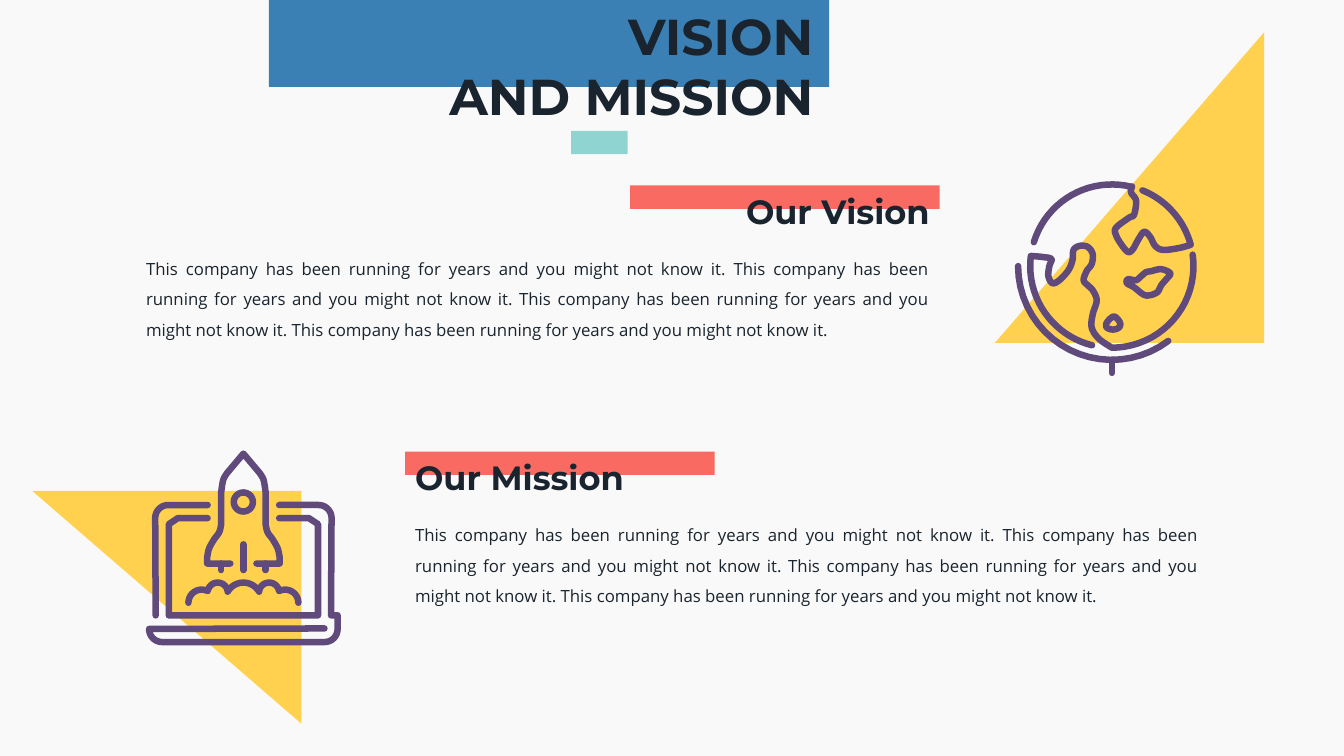
from dataclasses import dataclass
from math import cos, radians, sin

from lxml.etree import SubElement
from pptx import Presentation
from pptx.dml.color import RGBColor
from pptx.enum.shapes import MSO_SHAPE as Preset
from pptx.enum.text import MSO_ANCHOR as Anchor, MSO_AUTO_SIZE as AutoSize, PP_ALIGN as Align
from pptx.oxml.ns import qn
from pptx.util import Inches, Pt

Point = tuple[float, float]
Outline = list[Point]

INK, PURPLE, BLUE, TEAL = "1A242E", "604A7B", "3B80B5", "90D4D2"
RED, YELLOW, PAPER = "F96A62", "FFD14F", "F9F9F9"

deck = Presentation()
deck.slide_width, deck.slide_height = Inches(13.333), Inches(7.5)
COLUMN, ROW = deck.slide_width / 100, deck.slide_height / 100
ICON_CELL = deck.slide_height / 750
slide = deck.slides.add_slide(deck.slide_layouts[5])


@dataclass
class Box:
    """Place and size in hundredths of the slide's width and height."""
    left: float
    top: float
    width: float
    height: float

    def emu(self) -> tuple[int, int, int, int]:
        return (round(self.left * COLUMN), round(self.top * ROW),
                round(self.width * COLUMN), round(self.height * ROW))


@dataclass
class Block:
    box: Box
    color: str
    preset: Preset = Preset.RECTANGLE
    turn: int = 0


@dataclass
class Section:
    heading: str
    left: float
    top: float
    align: Align


@dataclass
class Stroke:
    points: Outline
    closed: bool = False


@dataclass
class Icon:
    column: float
    row: float
    strokes: list[Stroke]


def paint(color_format, color: str) -> None:
    color_format.rgb = RGBColor.from_string(color)


def draw_block(block: Block) -> None:
    left, top, width, height = block.box.emu()
    if block.turn % 180:  # a quarter turn swaps the sides around the same centre
        left, top = left + (width - height) // 2, top + (height - width) // 2
        width, height = height, width
    panel = slide.shapes.add_shape(block.preset, left, top, width, height)
    panel.rotation = block.turn
    panel.shadow.inherit = False
    panel.fill.solid()
    paint(panel.fill.fore_color, block.color)
    panel.line.fill.background()


def write(holder, text: str, *, size: float, font: str, bold: bool = False,
          align: Align = Align.LEFT, anchor: Anchor = Anchor.TOP,
          spacing: float = 1.0, before: float = 0) -> None:
    frame = holder.text_frame
    frame.word_wrap, frame.auto_size, frame.vertical_anchor = True, AutoSize.NONE, anchor
    paragraph = frame.paragraphs[0]
    paragraph.text = text
    paragraph.alignment, paragraph.line_spacing = align, spacing
    paragraph.space_before = Pt(before)
    for run in paragraph.runs:
        run.font.size, run.font.name, run.font.bold = Pt(size), font, bold
        paint(run.font.color, INK)


def arc(x: float, y: float, radius: float, start: float, end: float, steps: int = 20) -> Outline:
    """Points on a circle; angles run clockwise from the right."""
    angles = [radians(start + (end - start) * i / steps) for i in range(steps + 1)]
    return [(x + radius * cos(a), y + radius * sin(a)) for a in angles]


def smooth(points: Outline, closed: bool = False, steps: int = 5) -> Outline:
    """Catmull-Rom curve through the points."""
    ring = [points[-1], *points, *points[:2]] if closed else [points[0], *points, points[-1]]
    curve: Outline = []
    for a, b, c, d in zip(ring, ring[1:], ring[2:], ring[3:]):
        for t in (i / steps for i in range(steps)):
            x, y = (b[k] + t * (c[k] - a[k]) / 2
                    + t * t * (2 * a[k] - 5 * b[k] + 4 * c[k] - d[k]) / 2
                    + t ** 3 * (3 * b[k] - a[k] - 3 * c[k] + d[k]) / 2 for k in (0, 1))
            curve.append((x, y))
    return curve if closed else [*curve, points[-1]]


def mirror(points: Outline) -> Outline:
    return [(-x, y) for x, y in reversed(points)]


def draw_icon(icon: Icon) -> None:
    group = slide.shapes.add_group_shape()
    for stroke in icon.strokes:
        start, *rest = [(round(icon.column * COLUMN + x * ICON_CELL),
                         round(icon.row * ROW + y * ICON_CELL)) for x, y in stroke.points]
        builder = group.shapes.build_freeform(*start)
        builder.add_line_segments(rest, close=stroke.closed)
        contour = builder.convert_to_shape()
        contour.shadow.inherit = False
        contour.fill.background()
        contour.line.width = Pt(4.65)
        paint(contour.line.color, PURPLE)
        outline = contour.element.spPr.find(qn("a:ln"))
        outline.set("cap", "rnd")
        SubElement(outline, qn("a:round"))


# Globe, measured from its centre
north = smooth([(20, -79), (19, -73), (24, -65), (22, -51), (17, -48), (4, -38), (4, -31),
                (9, -22), (16, -14), (21, -17), (26, -26), (32, -34), (38, -29), (43, -20),
                (51, -16), (67, -18), (78, -21)])
south = smooth([(0, 81), (-13, 72), (-20, 61), (-19, 48), (-15, 34), (-19, 24), (-24, 19),
                (-28, 14), (-25, 5), (-20, -2), (-19, -12), (-24, -19), (-32, -20), (-38, -16),
                (-39, -6), (-43, 4), (-52, 14), (-59, 17), (-63, 10), (-62, 0), (-60, -7),
                (-69, -9), (-80, -10)])
island = smooth([(39, 5), (34, 6), (29, 10), (24, 14), (16, 13), (15, 17), (22, 21), (31, 28),
                 (37, 29), (45, 26), (49, 19), (54, 13), (58, 8), (55, 5), (48, 3)], closed=True)
lake = smooth([(2, 50), (-5, 56), (-5, 61), (1, 63), (7, 61), (8, 56)], closed=True)
globe = Icon(82.73, 35.2, [
    Stroke(arc(0, 0, 81, 197, 284) + north + arc(0, 0, 81, 345, 292)),
    Stroke(arc(0, 0, 81, -8, 90) + south + arc(0, 0, 81, 187, 104)),
    Stroke(island, closed=True),
    Stroke(lake, closed=True),
    Stroke(arc(0, 0, 93, 180, 53)),
    Stroke([(0, 93), (0, 106)]),
])

# Rocket over a laptop, measured from the rocket's axis
hull = [(-13, 59), (-36, 59)] + smooth([(-36, 53), (-34, 44), (-29, 35), (-24, 28), (-22, 20)]) \
    + smooth([(-22, -12), (-20, -24), (-16, -31)]) + [(0, -50)]
nozzle = [(-22, 59), (-22, 65.5)]
smoke = arc(-41.5, 98, 13, 180, 285) + arc(-25.5, 88, 10, 190, 350)
screen = [(-35.5, 14), (-65, 14), (-74, 20), (-74, 110.5)]
lid = [(-35.5, 1)] + arc(-74.5, 14, 13, 270, 180) + [(-87, 110.5)]
base = [(93.5, 110.5), (93.5, 124)] + arc(80.5, 124, 13, 0, 90) \
    + arc(-80.5, 124, 13, 90, 180) + [(80.5, 123.5)]
rocket = Icon(18.11, 66.67, [
    Stroke(smoke + arc(0, 96, 18, 210, 330) + mirror(smoke)),
    Stroke(arc(0, -2, 9.5, 0, 342), closed=True),
    Stroke([(0, 40), (0, 65.5)]),
    Stroke(lid),
    Stroke(mirror(lid)[::-1] + base),
    Stroke(hull + mirror(hull)),
    Stroke(nozzle),
    Stroke(mirror(nozzle)),
    Stroke(screen + mirror(screen)),
])

# Sections
TEXT_WIDTH, BAR_WIDTH, BAR_HEIGHT = 59.78, 23.03, 3.1
SENTENCE = "This company has been running for years and you might not know it."
sections = [
    Section("Our Vision", 10.13, 24.53, Align.RIGHT),
    Section("Our Mission", 30.15, 59.73, Align.LEFT),
]

# Background and coloured blocks
slide.background.fill.solid()
paint(slide.background.fill.fore_color, PAPER)
for block in [
    Block(Box(20, 0, 41.7, 11.5), BLUE),
    Block(Box(42.5, 17.3, 4.2, BAR_HEIGHT), TEAL),
    Block(Box(74.03, 4.27, 20.03, 41.07), YELLOW, Preset.RIGHT_TRIANGLE, 270),
    Block(Box(2.4, 64.93, 20.03, 30.8), YELLOW, Preset.RIGHT_TRIANGLE, 180),
]:
    draw_block(block)

# Title, brought in front of the blue block
title = slide.shapes.title
title.left, title.top, title.width, title.height = Box(30, 0, 31.27, 17.33).emu()
write(title, "VISION\nAND MISSION", size=36, font="Montserrat", bold=True,
      align=Align.RIGHT, anchor=Anchor.MIDDLE)
slide.shapes.element.append(title.element)

# Headings, their bars and paragraphs
for section in sections:
    indent = TEXT_WIDTH - BAR_WIDTH if section.align == Align.RIGHT else 0
    draw_block(Block(Box(section.left + indent, section.top, BAR_WIDTH, BAR_HEIGHT), RED))
    heading = slide.shapes.add_textbox(*Box(section.left, section.top, TEXT_WIDTH, 7.47).emu())
    write(heading, section.heading, size=24, font="Montserrat", bold=True,
          align=section.align, anchor=Anchor.MIDDLE, spacing=0.9, before=7.5)
    story = slide.shapes.add_textbox(
        *Box(section.left, section.top + 7.73, TEXT_WIDTH, 17.87).emu())
    write(story, " ".join([SENTENCE] * 4), size=12, font="Open Sans",
          align=Align.JUSTIFY, spacing=1.5, before=7.5)

# Icons
for icon in (globe, rocket):
    draw_icon(icon)

deck.save("out.pptx")
